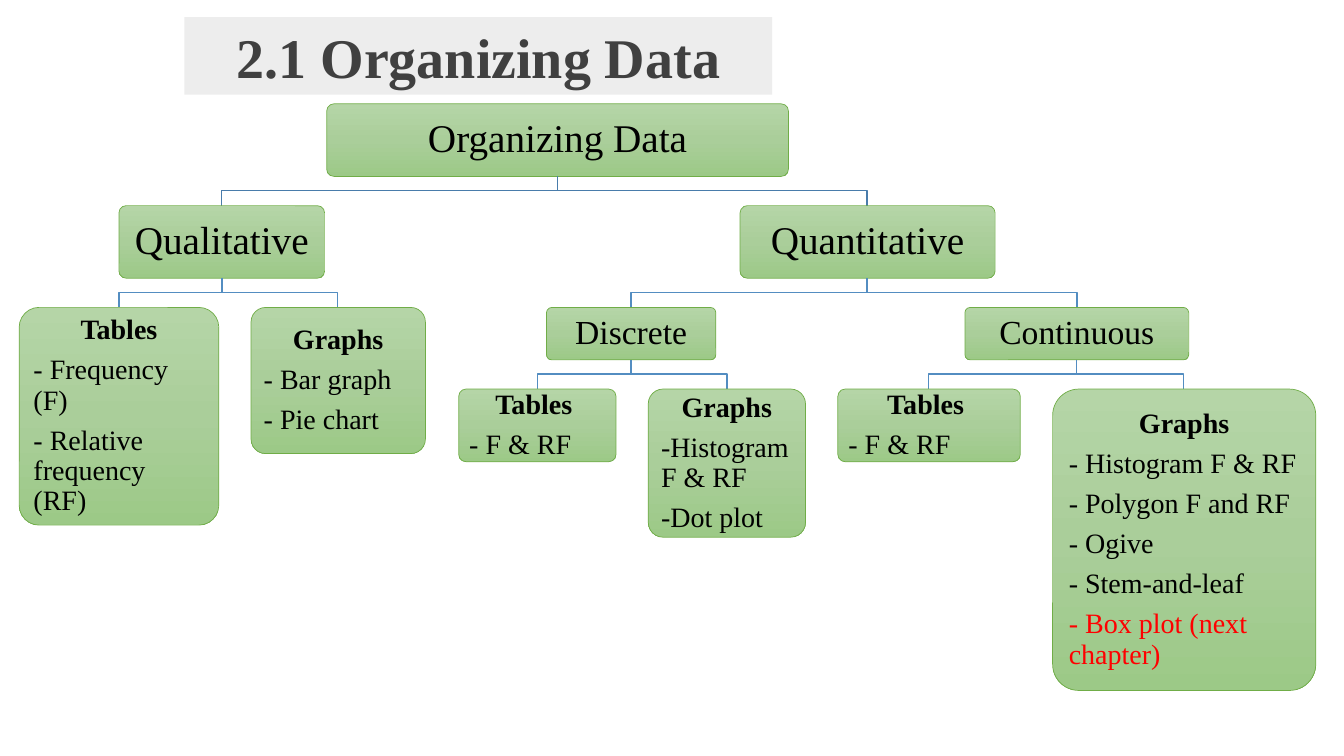
from copy import deepcopy
from dataclasses import dataclass

from pptx import Presentation
from pptx.dml.color import RGBColor as Rgb
from pptx.enum.shapes import MSO_SHAPE as Preset
from pptx.enum.text import MSO_ANCHOR as Anchor, PP_ALIGN as Align
from pptx.oxml.ns import qn
from pptx.shapes.autoshape import Shape
from pptx.slide import Slide
from pptx.util import Emu, Pt

EMU_PER_PX = 9144  # 100 px to the inch
LEVEL_GAP = 29


@dataclass(frozen=True)
class Theme:
    font: str = "Times New Roman"
    title_size: int = 40
    branch_size: int = 28
    type_size: int = 24
    leaf_size: int = 20
    text: Rgb = Rgb.from_string("000000")
    highlight: Rgb = Rgb.from_string("FF0000")
    title_text: Rgb = Rgb.from_string("404040")
    title_fill: Rgb = Rgb.from_string("EDEDED")
    outline: Rgb = Rgb.from_string("70AD47")
    root_link: Rgb = Rgb.from_string("497CAB")
    link: Rgb = Rgb.from_string("538DC1")
    gradient: tuple[Rgb, ...] = tuple(map(Rgb.from_string, ("B5D5A7", "AACE9A", "9CC987")))


THEME = Theme()


@dataclass(frozen=True)
class Node:
    """A box of the tree; its top follows from its parent."""
    heading: str
    left: int
    width: int
    height: int
    size: int
    items: tuple[str, ...] = ()
    highlighted: str = ""
    children: tuple["Node", ...] = ()

    @property
    def center(self) -> int:
        return self.left + self.width // 2


def leaf(heading: str, left: int, width: int, height: int, *items: str,
         highlighted: str = "") -> Node:
    return Node(heading, left, width, height, THEME.leaf_size, items, highlighted)


TREE = Node("Organizing Data", 324, 458, 72, THEME.branch_size, children=(
    Node("Qualitative", 118, 204, 72, THEME.branch_size, children=(
        leaf("Tables", 19, 198, 216, "- Frequency (F)", "- Relative frequency (RF)"),
        leaf("Graphs", 249, 173, 145, "- Bar graph", "- Pie chart"),
    )),
    Node("Quantitative", 734, 253, 72, THEME.branch_size, children=(
        Node("Discrete", 542, 168, 52, THEME.type_size, children=(
            leaf("Tables ", 455, 156, 72, "- F & RF"),
            leaf("Graphs", 643, 156, 147, "-Histogram F & RF", "-Dot plot"),
        )),
        Node("Continuous", 957, 222, 52, THEME.type_size, children=(
            leaf("Tables ", 831, 181, 72, "- F & RF"),
            leaf("Graphs", 1044, 261, 299, "- Histogram F & RF", "- Polygon F and RF",
                 "- Ogive", "- Stem-and-leaf", highlighted="- Box plot (next chapter)"),
        )),
    )),
))


def px(value: int) -> Emu:
    return Emu(value * EMU_PER_PX)


def add_box(slide: Slide, preset: Preset, left: int, top: int, width: int, height: int) -> Shape:
    shape = slide.shapes.add_shape(preset, px(left), px(top), px(width), px(height))
    shape.shadow.inherit = False
    shape.text_frame.word_wrap = True
    shape.text_frame.vertical_anchor = Anchor.MIDDLE
    return shape


def add_text(shape: Shape, index: int, text: str, size: int, color: Rgb,
             bold: bool = False, align: Align = Align.CENTER):
    frame = shape.text_frame
    paragraph = frame.add_paragraph() if index else frame.paragraphs[0]
    paragraph.alignment = align
    run = paragraph.add_run()
    run.text = text
    run.font.name = THEME.font
    run.font.size = Pt(size)
    run.font.bold = bold
    run.font.color.rgb = color
    return paragraph


def fill_gradient(shape: Shape) -> None:
    shape.fill.gradient()
    shape.fill.gradient_angle = 270
    stop_list = next(shape.element.iter(qn("a:gsLst")))
    stop_list.insert(1, deepcopy(stop_list[0]))
    for index, (stop, color) in enumerate(zip(shape.fill.gradient_stops, THEME.gradient)):
        stop.position = index / 2
        stop.color.rgb = color


def add_node(slide: Slide, node: Node, top: int) -> None:
    shape = add_box(slide, Preset.ROUNDED_RECTANGLE, node.left, top, node.width, node.height)
    shape.adjustments[0] = 0.1
    fill_gradient(shape)
    shape.line.color.rgb = THEME.outline
    shape.line.width = Pt(0.5)

    # Margins and paragraph gaps grow with the type size
    frame = shape.text_frame
    frame.margin_left = frame.margin_right = Pt(node.size * 0.3)
    frame.margin_top = frame.margin_bottom = Pt(node.size * 0.3)
    lines = (node.heading, *node.items) + ((node.highlighted,) if node.highlighted else ())
    for index, text in enumerate(lines):
        color = THEME.highlight if text == node.highlighted else THEME.text
        bold = index == 0 and node.size == THEME.leaf_size
        align = Align.LEFT if index else Align.CENTER
        paragraph = add_text(shape, index, text, node.size, color, bold, align)
        paragraph.line_spacing = 0.9
        paragraph.space_after = Pt(node.size * 0.35)


def add_link(slide: Slide, parent: Node, child: Node, start: int, color: Rgb) -> None:
    middle, end = start + LEVEL_GAP // 2, start + LEVEL_GAP
    builder = slide.shapes.build_freeform(parent.center, start, EMU_PER_PX)
    builder.add_line_segments(
        [(parent.center, middle), (child.center, middle), (child.center, end)], close=False)
    link = builder.convert_to_shape()
    link.shadow.inherit = False
    link.fill.background()
    link.line.color.rgb = color
    link.line.width = Pt(1)


def add_tree(slide: Slide, node: Node, top: int, link_color: Rgb) -> None:
    add_node(slide, node, top)
    bottom = top + node.height
    for child in node.children:
        add_link(slide, node, child, bottom, link_color)
        add_tree(slide, child, bottom + LEVEL_GAP, THEME.link)


def add_title(slide: Slide) -> None:
    title = add_box(slide, Preset.RECTANGLE, 183, 17, 583, 77)
    title.fill.solid()
    title.fill.fore_color.rgb = THEME.title_fill
    title.line.fill.background()
    add_text(title, 0, "2.1 Organizing Data", THEME.title_size, THEME.title_text, bold=True)


def main() -> None:
    presentation = Presentation()
    presentation.slide_width, presentation.slide_height = px(1333), px(750)
    slide = presentation.slides.add_slide(presentation.slide_layouts[6])
    add_tree(slide, TREE, 103, THEME.root_link)
    add_title(slide)
    presentation.save("out.pptx")


if __name__ == "__main__":
    main()
